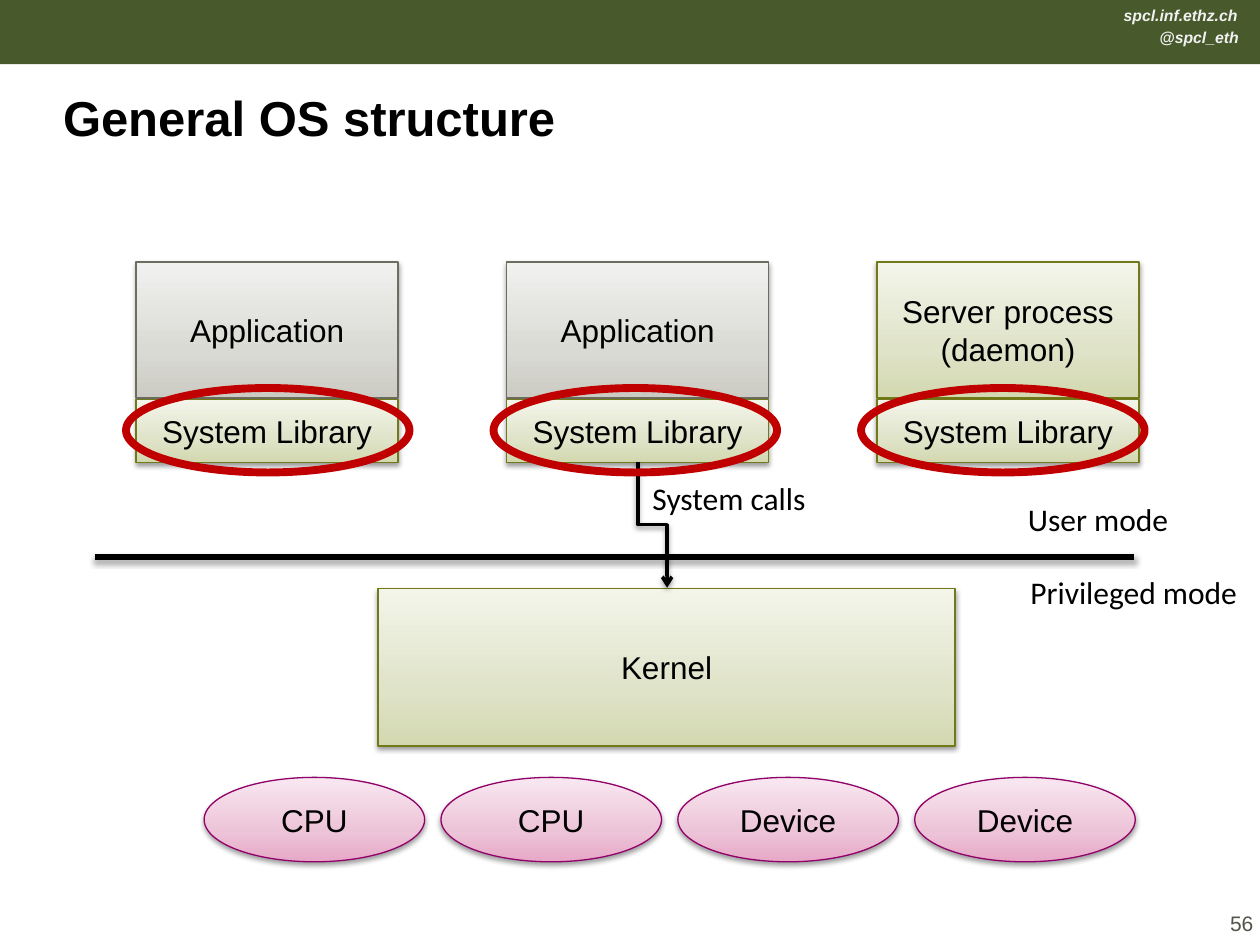
from lxml import etree
from pptx import Presentation
from pptx.dml.color import RGBColor
from pptx.enum.shapes import MSO_CONNECTOR as LINK, MSO_SHAPE as SHAPE
from pptx.enum.text import MSO_ANCHOR as ANCHOR, MSO_AUTO_SIZE as FIT, PP_ALIGN as ALIGN
from pptx.oxml.ns import qn
from pptx.util import Inches, Pt

# Content
TITLE = "General OS structure"
HEAD = [("spcl.inf.ethz.ch", (8.81, 0, 1.11, 0.25)),
        ("@spcl_eth", (9.09, 0.17, 0.84, 0.25))]
PROCS = [("Application", "gray"), ("Application", "gray"),
         ("Server process\n(daemon)", "green")]
LIB = "System Library"
KERNEL = "Kernel"
PARTS = ["CPU", "CPU", "Device", "Device"]
NOTES = [("Privileged mode", (8.08, 4.5, 1.86, 0.4)),
         ("User mode", (8.06, 3.92, 1.33, 0.4)),
         ("System calls", (5.08, 3.75, 1.43, 0.4))]
PAGE = "56"

# Theme: each tone is a line colour and three gradient colours, bottom to top
THEME = {
    "font": "Arial", "note": "Calibri",
    "title": 28, "text": 18, "page": 12, "head": 9,
    "black": "000000", "white": "FFFFFF", "bar": "485A2C",
    "pale": "F2F2F2", "dim": "53534B", "red": "C00000",
    "green": ("717919", "D3D8B0", "DFE3C8", "F3F5EA"),
    "gray": ("6D6D62", "CBCBC3", "DADAD5", "F1F1EF"),
    "pink": ("910169", "E6A8C7", "ECC3D7", "F9E7F0"),
}
STOPS = (0, 35, 100)


def color(name):
    return RGBColor.from_string(THEME.get(name, name))


def place(box):
    return [Inches(n) for n in box]


def write(shape, text, size="text", tone="black", font="font",
          align=ALIGN.CENTER, bold=None, slant=None):
    frame = shape.text_frame
    frame.text = text
    for para in frame.paragraphs:
        para.alignment = align
        for run in para.runs:
            face = run.font
            face.name, face.size = THEME[font], Pt(THEME[size])
            face.bold, face.italic = bold, slant
            face.color.rgb = color(tone)
    return frame


def label(box, text, **style):
    shape = slide.shapes.add_textbox(*place(box))
    frame = write(shape, text, **style)
    frame.word_wrap = False
    frame.auto_size = FIT.SHAPE_TO_FIT_TEXT
    return frame


def child(parent, tag, **attrs):
    return etree.SubElement(parent, qn(tag), {k: str(v) for k, v in attrs.items()})


def tint(parent, code, alpha=None):
    node = child(parent, "a:srgbClr", val=code)
    if alpha:
        child(node, "a:alpha", val=alpha * 1000)


def shade(effects, alpha=38, dist=1.6):
    node = child(effects, "a:outerShdw", blurRad=Pt(3.1), dist=Pt(dist),
                 dir=90 * 60000, rotWithShape=0)
    tint(node, THEME["black"], alpha)


def block(kind, box, text, tone, home=None):
    shape = (home or slide).shapes.add_shape(kind, *place(box))
    edge, *shades = THEME[tone]
    shape.fill.gradient()
    shape.fill.gradient_angle = 90
    props = shape.element.spPr
    stops = props.find(".//" + qn("a:gsLst"))
    stops.clear()
    for pos, code in zip(STOPS, shades):
        tint(child(stops, "a:gs", pos=pos * 1000), code)
    shape.line.color.rgb = color(edge)
    shape.line.width = Pt(0.75)
    shape.shadow.inherit = False
    shade(props.find(qn("a:effectLst")))
    write(shape, text).vertical_anchor = ANCHOR.MIDDLE
    return shape


def link(kind, ends, width, **shadow):
    line = slide.shapes.add_connector(kind, *place(ends))
    line.line.color.rgb = color("black")
    line.line.width = Pt(width)
    shade(child(line.element.spPr, "a:effectLst"), **shadow)
    return line


deck = Presentation()
deck.slide_width, deck.slide_height = Inches(10), Inches(7.5)
slide = deck.slides.add_slide(deck.slide_layouts[5])

# Header bar
bar = slide.shapes.add_shape(SHAPE.RECTANGLE, *place((0, 0, 10, 0.51)))
bar.fill.solid()
bar.fill.fore_color.rgb = color("bar")
bar.line.fill.background()
bar.shadow.inherit = False
for text, box in HEAD:
    label(box, text, size="head", tone="pale", align=ALIGN.RIGHT,
          bold=True, slant=True)

# Title
title = slide.shapes.title
title.left, title.top, title.width, title.height = place((0.35, 0.58, 9.29, 0.58))
title.fill.solid()
title.fill.fore_color.rgb = color("white")
frame = write(title, TITLE, size="title", align=ALIGN.LEFT, bold=True)
frame.auto_size = FIT.NONE
frame.vertical_anchor = ANCHOR.BOTTOM
frame.margin_left, frame.margin_right = Inches(0.15), Inches(0.16)
frame.margin_top = frame.margin_bottom = 0

# Kernel and the border between modes
kernel = block(SHAPE.RECTANGLE, (3, 4.67, 4.58, 1.25), KERNEL, "green")
link(LINK.STRAIGHT, (0.75, 4.42, 9, 4.42), 3, alpha=35, dist=1.8)

# Processes, each on its system library
libs = []
for i, (text, tone) in enumerate(PROCS):
    group = slide.shapes.add_group_shape()
    left = 1.08 + 2.94 * i
    block(SHAPE.RECTANGLE, (left, 2.08, 2.08, 1.08), text, tone, group)
    libs.append(block(SHAPE.RECTANGLE, (left, 3.17, 2.08, 0.5), LIB, "green", group))

# System call: elbow turned to leave downwards
call = link(LINK.ELBOW, (5.06, 3.67, 5.29, 4.67), 2)
call.begin_connect(libs[1], 2)
call.end_connect(kernel, 0)
call.left, call.top, call.width, call.height = place((4.68, 4.05, 1, 0.23))
turn = call.element.spPr.find(qn("a:xfrm"))
turn.set("rot", str(270 * 60000))
turn.set("flipH", "1")
child(call.line._get_or_add_ln(), "a:tailEnd", type="arrow")

# Notes
for text, box in NOTES:
    label(box, text, font="note", align=ALIGN.LEFT)

# Rings around the libraries
for i in range(len(PROCS)):
    ring = slide.shapes.add_shape(SHAPE.OVAL, *place((1 + 2.917 * i, 3.08, 2.25, 0.67)))
    ring.fill.background()
    ring.line.color.rgb = color("red")
    ring.line.width = Pt(4.5)
    ring.shadow.inherit = False

# Hardware
for i, text in enumerate(PARTS):
    block(SHAPE.OVAL, (1.62 + 1.88 * i, 6.17, 1.75, 0.67), text, "pink")

# Page number
frame = label((9.71, 7.07, 0.29, 0.51), PAGE, size="page", tone="dim")
frame.auto_size = FIT.NONE
frame.vertical_anchor = ANCHOR.MIDDLE
frame.margin_left = frame.margin_right = frame.margin_top = frame.margin_bottom = 0

deck.save("out.pptx")
